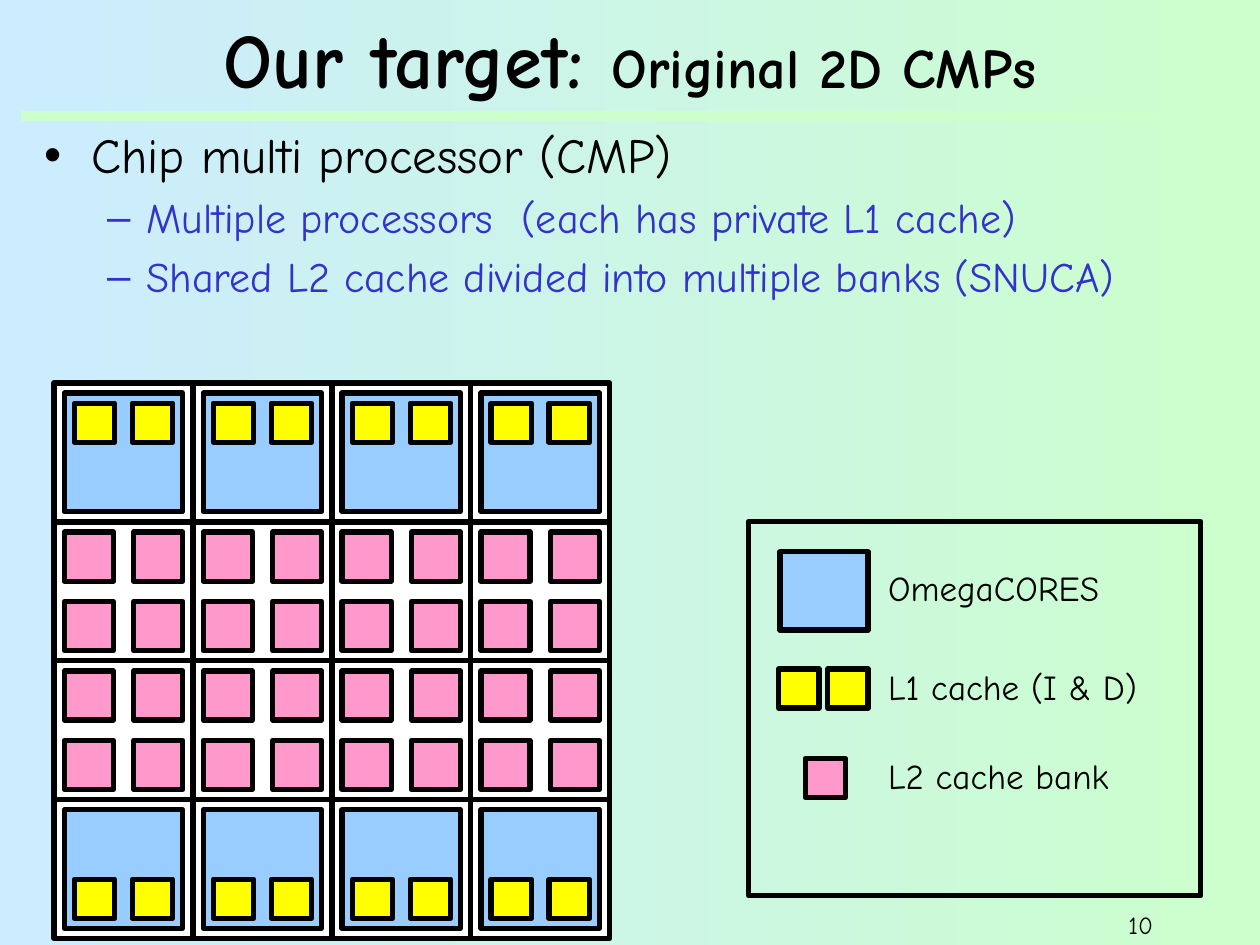
from lxml import etree
from pptx import Presentation
from pptx.dml.color import RGBColor
from pptx.enum.shapes import MSO_CONNECTOR, MSO_SHAPE
from pptx.enum.text import MSO_ANCHOR, MSO_AUTO_SIZE, PP_ALIGN
from pptx.oxml.ns import qn
from pptx.util import Inches, Pt

RECTANGLE = MSO_SHAPE.RECTANGLE
STRAIGHT = MSO_CONNECTOR.STRAIGHT
LEFT, CENTER, RIGHT = PP_ALIGN.LEFT, PP_ALIGN.CENTER, PP_ALIGN.RIGHT
TOP, MIDDLE = MSO_ANCHOR.TOP, MSO_ANCHOR.MIDDLE
NO_AUTOFIT = MSO_AUTO_SIZE.NONE

FONT = "Comic Neue"
BLACK, WHITE, INDIGO = "000000", "FFFFFF", "3333CC"
SKY, MINT = "CCECFF", "CCFFCC"
CORE_COLOR, L1_COLOR, L2_COLOR = "99CCFF", "FFFF00", "FF99CC"

TITLE = [("Our target: ", 44), ("Original 2D CMPs", 32)]
BULLETS = [
    (0, "Chip multi processor (CMP)", 28, BLACK),
    (1, "Multiple processors  (each has private L1 cache)", 24, INDIGO),
    (1, "Shared L2 cache divided into multiple banks (SNUCA)", 24, INDIGO),
]
PAGE_NUMBER = "10"

# Tile rows of the chip, from top to bottom
TILE_ROWS = ["core, L1 on top", "banks", "banks", "core, L1 at bottom"]
COLUMNS = 4
CHIP_LEFT, CHIP_TOP, CHIP_SIZE = 0.43, 3.04, 4.41
TILE = CHIP_SIZE / COLUMNS
MARGIN = 0.08
CORE = 0.94
L1_SIZE = (0.32, 0.31)
L1_OFFSETS = (0.16, 0.62)
BANK = 0.39
BANK_OFFSETS = (MARGIN, MARGIN + TILE / 2)

LEGEND_FRAME = (5.94, 4.14, 3.59, 2.97)
LEGEND_KEYS = [
    (6.19, 4.38, 0.7, 0.62, CORE_COLOR),
    (6.57, 5.31, *L1_SIZE, L1_COLOR),
    (6.18, 5.31, *L1_SIZE, L1_COLOR),
    (6.39, 6.02, *L1_SIZE, L2_COLOR),
]
LEGEND_LABELS = [(4.45, "OmegaCORES"), (5.23, "L1 cache (I & D)"),
                 (5.94, "L2 cache bank")]


def color(value):
    return RGBColor.from_string(value)


def add_span(para, text, size, fill=BLACK, bold=False):
    span = para.add_run()
    span.text = text
    formats = {"name": FONT, "size": Pt(size), "bold": bold}
    for name, value in formats.items():
        setattr(span.font, name, value)
    span.font.color.rgb = color(fill)


def place(shape, left, top, width, height):
    bounds = {"left": left, "top": top, "width": width, "height": height}
    for name, value in bounds.items():
        setattr(shape, name, Inches(value))


def prepare_frame(shape, anchor):
    frame = shape.text_frame
    formats = {"word_wrap": True, "auto_size": NO_AUTOFIT,
               "vertical_anchor": anchor}
    for name, value in formats.items():
        setattr(frame, name, value)
    return frame


def add_label(page, bounds, text, size, align=LEFT):
    box = page.shapes.add_textbox(*map(Inches, bounds))
    para = prepare_frame(box, TOP).paragraphs[0]
    para.alignment = align
    add_span(para, text, size)


def add_block(page, left, top, width, height, fill=None):
    """Add a black-edged rectangle, hollow when no fill is given."""
    block = page.shapes.add_shape(
        RECTANGLE, *map(Inches, (left, top, width, height)))
    block.shadow.inherit = False
    if fill:
        block.fill.solid()
        block.fill.fore_color.rgb = color(fill)
    else:
        block.fill.background()
    block.line.color.rgb = color(BLACK)
    block.line.width = Pt(3)


def paint_background(page):
    fill = page.background.fill
    fill.gradient()
    fill.gradient_angle = 0
    for stop, position, value in zip(fill.gradient_stops, (0, 1), (SKY, MINT)):
        stop.position = position
        stop.color.rgb = color(value)


def add_title_rule(page):
    rule = page.shapes.add_connector(
        STRAIGHT, Inches(0.17), Inches(0.92), Inches(9.92), Inches(0.92))
    rule.line.color.rgb = color(MINT)
    rule.line.width = Pt(6)
    properties = rule.line._get_or_add_ln().getparent()
    etree.SubElement(properties, qn("a:effectLst"))


def fill_placeholders(page):
    title, body = page.placeholders
    place(title, 0.25, 0.08, 9.5, 0.75)
    para = prepare_frame(title, MIDDLE).paragraphs[0]
    para.alignment = CENTER
    for text, size in TITLE:
        add_span(para, text, size, bold=True)

    place(body, 0.25, 0.94, 9.59, 2.27)
    frame = prepare_frame(body, TOP)
    for index, (level, text, size, fill) in enumerate(BULLETS):
        para = frame.add_paragraph() if index else frame.paragraphs[0]
        para.level = level
        add_span(para, text, size, fill)


def add_tile(page, left, top, kind):
    add_block(page, left, top, TILE, TILE, WHITE)
    if kind == "banks":
        for down in BANK_OFFSETS:
            for across in BANK_OFFSETS:
                add_block(page, left + across, top + down, BANK, BANK, L2_COLOR)
        return
    add_block(page, left + MARGIN, top + MARGIN, CORE, CORE, CORE_COLOR)
    down = 0.16 if kind == "core, L1 on top" else 0.63
    for across in L1_OFFSETS:
        add_block(page, left + across, top + down, *L1_SIZE, L1_COLOR)


def add_legend(page):
    for key in LEGEND_KEYS:
        add_block(page, *key)
    for top, text in LEGEND_LABELS:
        add_label(page, (6.95, top, 2.4, 0.44), text, 20)
    add_block(page, *LEGEND_FRAME)


def main():
    deck = Presentation()
    deck.slide_width, deck.slide_height = Inches(10), Inches(7.5)
    page = deck.slides.add_slide(deck.slide_layouts[1])
    paint_background(page)
    add_title_rule(page)
    fill_placeholders(page)
    add_legend(page)
    for column in range(COLUMNS):
        for row, kind in enumerate(TILE_ROWS):
            add_tile(page, CHIP_LEFT + column * TILE, CHIP_TOP + row * TILE, kind)
    add_label(page, (7.17, 7.17, 2.08, 0.5), PAGE_NUMBER, 14, RIGHT)
    deck.save("out.pptx")


if __name__ == "__main__":
    main()
